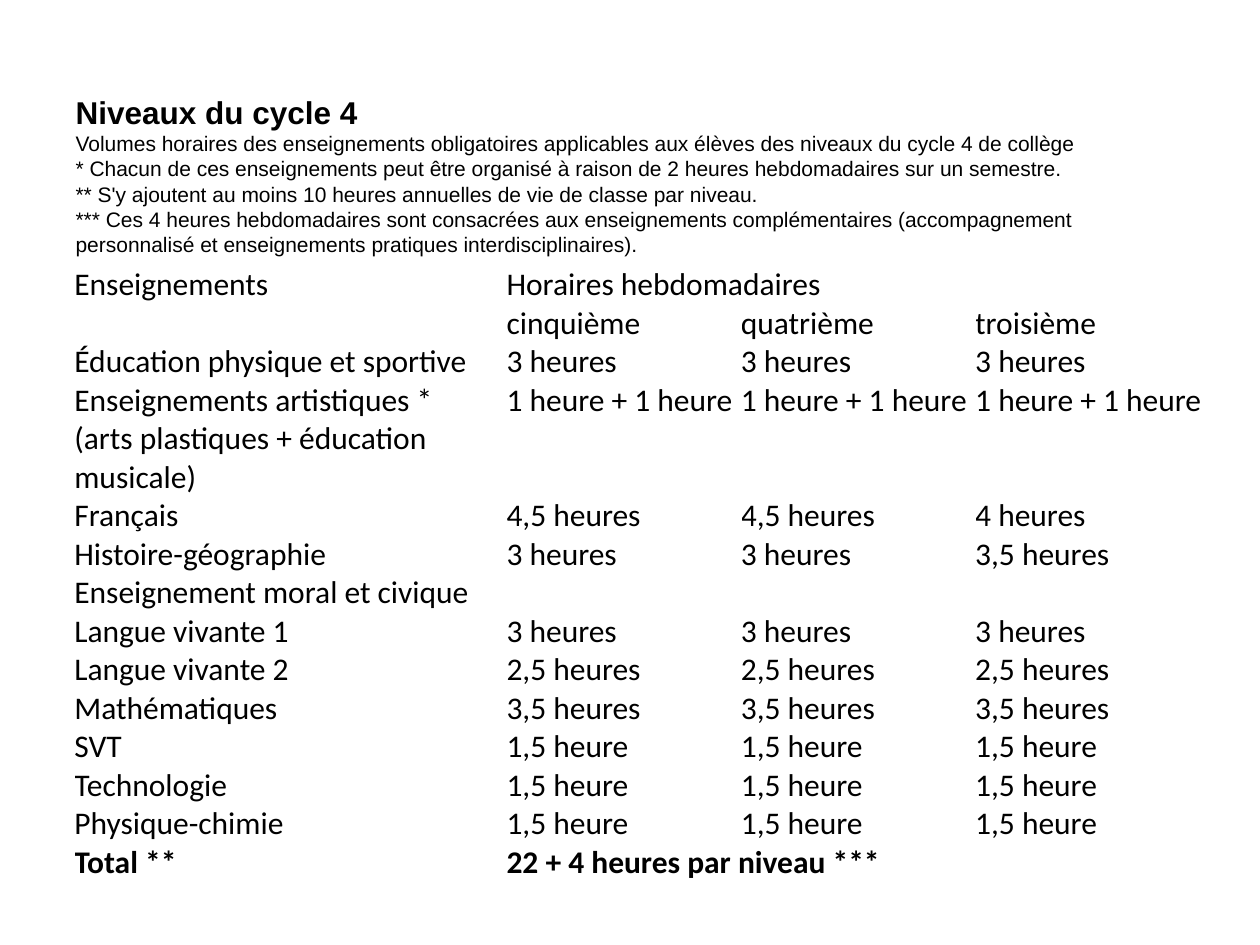
"""Build the slide of weekly teaching hours for cycle 4."""
from pptx import Presentation
from pptx.dml.color import RGBColor
from pptx.enum.text import MSO_ANCHOR as Anchor, MSO_AUTO_SIZE as Auto, PP_ALIGN as Align
from pptx.util import Inches, Pt

WIDE, HIGH = 10, 7.5
INK = "000000"
HEAD = [
    "Niveaux du cycle 4",
    "Volumes horaires des enseignements obligatoires applicables aux élèves des niveaux du cycle 4 de collège",
    "* Chacun de ces enseignements peut être organisé à raison de 2 heures hebdomadaires sur un semestre.",
    "** S'y ajoutent au moins 10 heures annuelles de vie de classe par niveau.",
    "*** Ces 4 heures hebdomadaires sont consacrées aux enseignements complémentaires "
    "(accompagnement personnalisé et enseignements pratiques interdisciplinaires).",
]
ROWS = [
    ("Enseignements", "Horaires hebdomadaires"),
    ("", "cinquième", "quatrième", "troisième"),
    ("Éducation physique et sportive", *["3 heures"] * 3),
    ("Enseignements artistiques *\n(arts plastiques + éducation musicale)", *["1 heure + 1 heure"] * 3),
    ("Français", "4,5 heures", "4,5 heures", "4 heures"),
    ("Histoire-géographie\nEnseignement moral et civique", "3 heures", "3 heures", "3,5 heures"),
    ("Langue vivante 1", *["3 heures"] * 3),
    ("Langue vivante 2", *["2,5 heures"] * 3),
    ("Mathématiques", *["3,5 heures"] * 3),
    ("SVT", *["1,5 heure"] * 3),
    ("Technologie", *["1,5 heure"] * 3),
    ("Physique-chimie", *["1,5 heure"] * 3),
    ("Total **", "22 + 4 heures par niveau ***"),
]
LAST = len(ROWS) - 1
COLS = [3.43, 1.86, 1.86, 1.86]
LINE = 0.3
LINES = {3: 3, 5: 2}
MERGES = [((0, 0), (1, 0)), ((0, 1), (0, 3)), ((LAST, 1), (LAST, 3))]
BARE = {"margin_left": 0, "margin_right": 0, "margin_top": 0, "margin_bottom": 0}
FLAGS = {"first_row": False, "horz_banding": False}
FRAME = {"word_wrap": True, "vertical_anchor": Anchor.MIDDLE, "auto_size": Auto.NONE}


def apply(item, form):
    for key, value in form.items():
        setattr(item, key, value)


def color(code):
    return RGBColor.from_string(code)


def style(para, face, size, bold):
    para.alignment = Align.LEFT
    for run in para.runs:
        apply(run.font, {"name": face, "size": Pt(size), "bold": bold})
        run.font.color.rgb = color(INK)


def add_head(slide):
    title = slide.shapes.title
    box = {"left": 0.05 * WIDE, "top": 0.09 * HIGH, "width": 0.82 * WIDE, "height": 0.19 * HIGH}
    apply(title, {key: Inches(value) for key, value in box.items()})
    frame = title.text_frame
    apply(frame, FRAME)
    frame.text = "\n".join(HEAD)
    for i, para in enumerate(frame.paragraphs):
        style(para, "Arial", 12 if i else 18, not i)


def add_hours(slide):
    highs = [LINE * LINES.get(r, 1) for r in range(len(ROWS))]
    place = (0.59, 2.11, sum(COLS), sum(highs))
    grid = slide.shapes.add_table(len(ROWS), len(COLS), *map(Inches, place)).table
    apply(grid, FLAGS)
    for col, wide in zip(grid.columns, COLS):
        col.width = Inches(wide)
    for r, (row, high) in enumerate(zip(grid.rows, highs)):
        row.height = Inches(high)
        for cell in row.cells:
            apply(cell, BARE)
            cell.fill.background()
        for cell, text in zip(row.cells, ROWS[r]):
            if text:
                cell.text = text
            for para in cell.text_frame.paragraphs:
                style(para, "Calibri", 18, r == LAST)
    for first, end in MERGES:
        grid.cell(*first).merge(grid.cell(*end))


def main():
    deck = Presentation()
    apply(deck, {"slide_width": Inches(WIDE), "slide_height": Inches(HIGH)})
    slide = deck.slides.add_slide(deck.slide_layouts[5])
    add_head(slide)
    add_hours(slide)
    deck.save("out.pptx")


if __name__ == "__main__":
    main()
